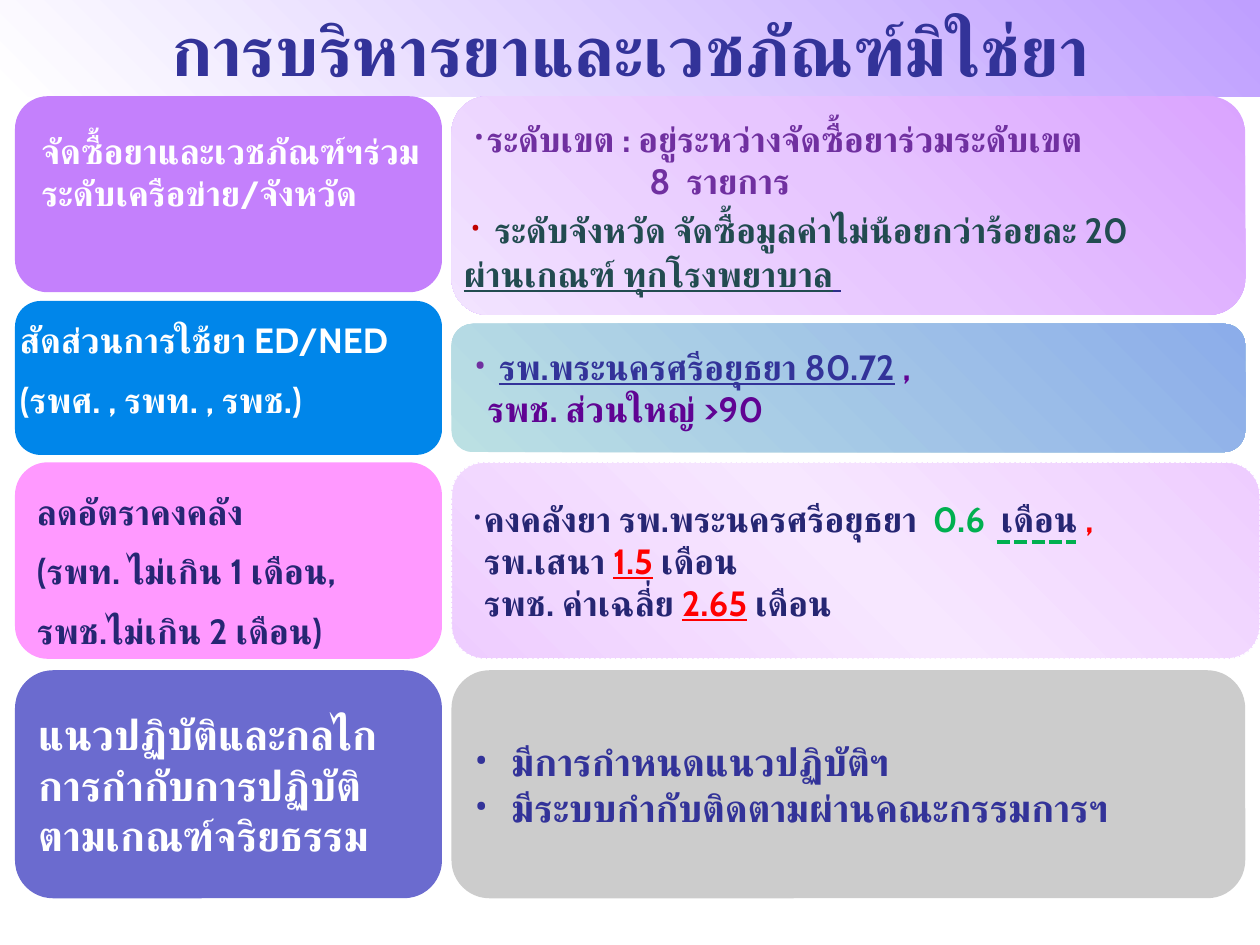
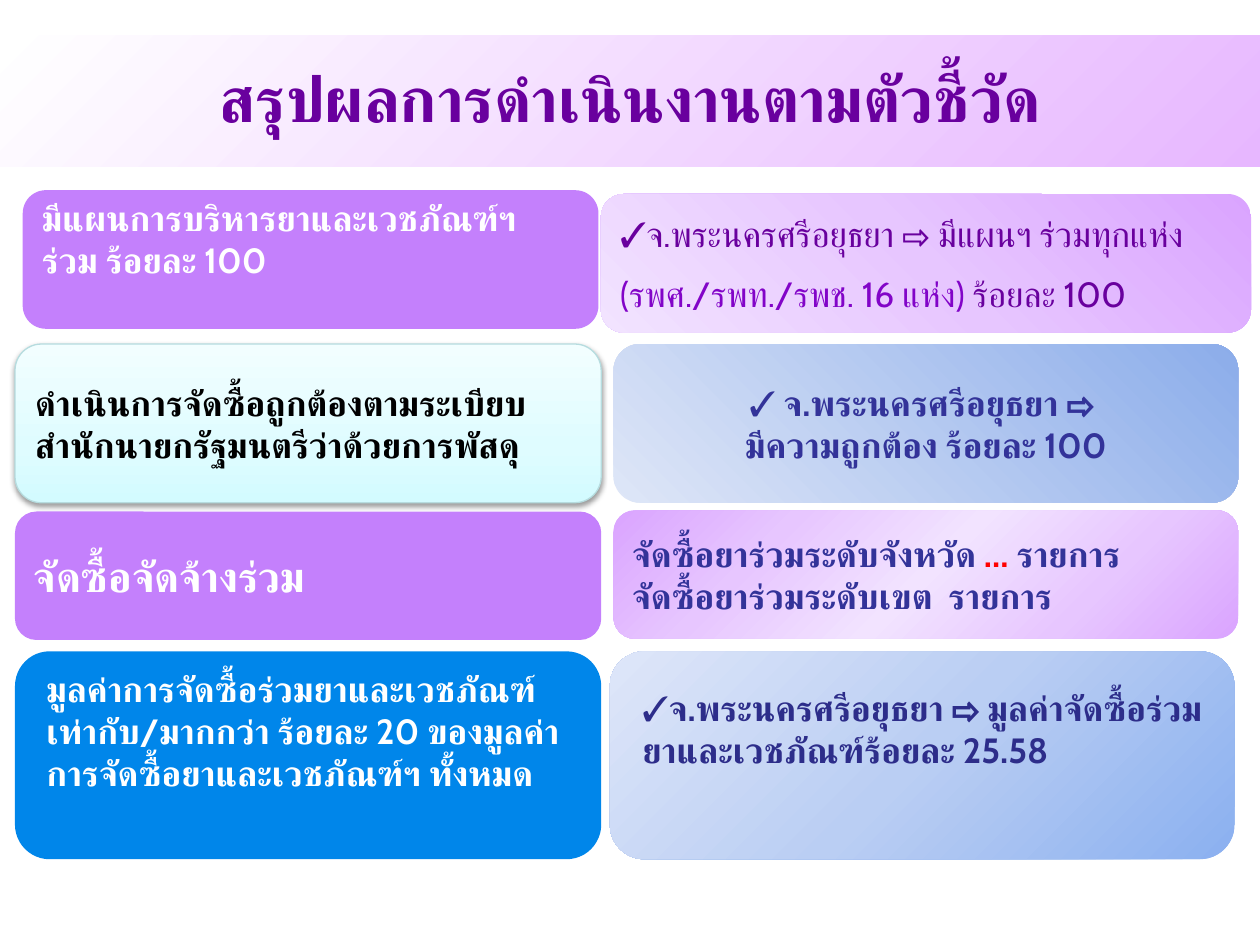
from dataclasses import dataclass
from typing import Optional

from lxml import etree
from pptx import Presentation
from pptx.dml.color import RGBColor
from pptx.enum.dml import MSO_LINE
from pptx.enum.shapes import MSO_CONNECTOR, MSO_SHAPE
from pptx.enum.text import MSO_ANCHOR, MSO_AUTO_SIZE, PP_ALIGN
from pptx.oxml.ns import qn
from pptx.util import Pt

ROUNDED = MSO_SHAPE.ROUNDED_RECTANGLE
STRAIGHT = MSO_CONNECTOR.STRAIGHT
DASHED = MSO_LINE.SQUARE_DOT
TOP, MIDDLE = MSO_ANCHOR.TOP, MSO_ANCHOR.MIDDLE
LEFT, CENTER = PP_ALIGN.LEFT, PP_ALIGN.CENTER
NO_AUTOFIT = MSO_AUTO_SIZE.NONE


@dataclass(frozen=True)
class Theme:
    font: str = "Cabin"
    bullet_font: str = "Roboto"
    body: int = 20
    medium: int = 22
    large: int = 24
    gap: int = 10
    white: str = "FFFFFF"
    black: str = "000000"
    indigo: str = "333399"
    navy: str = "262673"
    royal: str = "2D2D8A"
    plum: str = "69009E"
    violet: str = "7030A0"
    grape: str = "600393"
    orchid: str = "8204C8"
    forest: str = "224B50"
    green: str = "00B050"
    red: str = "FF0000"
    dark_red: str = "C00000"
    purple_fill: str = "C480FC"
    blue_fill: str = "0086EA"
    pink_fill: str = "FF99FF"
    slate_fill: str = "6B6BCF"
    grey_fill: str = "CCCCCC"
    aqua_edge: str = "B6DCDF"


T = Theme()


@dataclass(frozen=True)
class Gradient:
    angle: int
    stops: tuple


LILAC = Gradient(135, ((0, "DAA4FF"), (50, "E7C6FF"), (100, "F2E3FF")))
LILAC_GLOW = Gradient(45, ((0, "DAA4FF"), (25, "E7C6FF"), (50, "F2E3FF"),
                           (75, "E7C6FF"), (100, "DAA4FF")))
PALE_LILAC = Gradient(315, ((0, "EECDFF"), (50, "F7E7FF"), (100, "EECDFF")))
TEAL_BLUE = Gradient(315, ((0, "BBE0E3"), (100, "8CADEA")))
SKY = Gradient(315, ((0, "DEE6F7"), (100, "8CADEA")))
SKY_DOWN = Gradient(225, ((0, "8BB0F0"), (50, "BACEF3"), (100, "DEE6F9")))
AQUA = Gradient(270, ((0, "D3FBFF"), (35, "DFFCFF"), (100, "F2FEFF")))
MEDICINE_BAND = Gradient(315, ((0, "FFFFFF"), (100, "BF9FFF")))
SUMMARY_BAND = Gradient(45, ((0, "FFFFFF"), (100, "E7B7FF")))


@dataclass(frozen=True)
class Run:
    text: str
    color: Optional[str] = None
    underline: bool = False


@dataclass(frozen=True)
class Bullet:
    color: str
    percent: int = 100


@dataclass(frozen=True)
class Line:
    runs: tuple
    before: float = 0
    left: float = 0
    hang: float = 0
    bullet: Optional[Bullet] = None


def line(*runs, **layout):
    return Line(tuple(Run(r) if isinstance(r, str) else r for r in runs), **layout)


def points(box):
    return [Pt(length) for length in box]


def node(parent, tag, **attributes):
    return etree.SubElement(parent, qn(tag), {k: str(v) for k, v in attributes.items()})


def paint(shape, fill):
    if isinstance(fill, str):
        shape.fill.solid()
        shape.fill.fore_color.rgb = RGBColor.from_string(fill)
        return
    shape.fill.gradient()
    shape.fill.gradient_angle = (360 - fill.angle) % 360
    stops = shape.element.spPr.find(".//" + qn("a:gsLst"))
    for stop in list(stops):
        stops.remove(stop)
    for position, color in fill.stops:
        node(node(stops, "a:gs", pos=position * 1000), "a:srgbClr", val=color)


def add_bullet(paragraph, bullet):
    props = paragraph._p.get_or_add_pPr()
    node(node(props, "a:buClr"), "a:srgbClr", val=bullet.color)
    node(props, "a:buSzPct", val=bullet.percent * 1000)
    node(props, "a:buFont", typeface=T.bullet_font)
    node(props, "a:buChar", char="•")


def write(shape, lines, color, size=T.body, bold=True, align=LEFT, anchor=TOP,
          top=3.6, bottom=3.6):
    frame = shape.text_frame
    frame.word_wrap = True
    frame.auto_size = NO_AUTOFIT
    frame.vertical_anchor = anchor
    frame.margin_left = frame.margin_right = Pt(7.2)
    frame.margin_top, frame.margin_bottom = Pt(top), Pt(bottom)
    for index, item in enumerate(lines):
        paragraph = frame.add_paragraph() if index else frame.paragraphs[0]
        paragraph.alignment = align
        paragraph.space_before = Pt(item.before)
        props = paragraph._p.get_or_add_pPr()
        props.set("marL", str(Pt(item.left)))
        props.set("indent", str(-Pt(item.hang)))
        if item.bullet:
            add_bullet(paragraph, item.bullet)
        for piece in item.runs:
            run = paragraph.add_run()
            run.text = piece.text
            run.font.size = Pt(size)
            run.font.bold = bold
            run.font.underline = piece.underline
            run.font.color.rgb = RGBColor.from_string(piece.color or color)
            run.font.name = T.font
            node(run._r.get_or_add_rPr(), "a:cs", typeface=T.font)


def add_title(slide, text, box, fill, color, size, top):
    title = slide.shapes.title
    title.left, title.top, title.width, title.height = points(box)
    paint(title, fill)
    write(title, [line(text)], color, size, align=CENTER, top=top)


def add_panel(slide, box, fill, edge=None):
    panel = slide.shapes.add_shape(ROUNDED, *points(box))
    panel.shadow.inherit = False
    paint(panel, fill)
    if edge:
        panel.line.color.rgb = RGBColor.from_string(edge)
        panel.line.width = Pt(0.75)
    else:
        panel.line.fill.background()
    return panel


def add_text(slide, box, lines, color, **style):
    write(slide.shapes.add_textbox(*points(box)), lines, color, **style)


def add_soft_shadow(shape):
    effects = shape.element.spPr.find(qn("a:effectLst"))
    shadow = node(effects, "a:outerShdw", blurRad=Pt(3.1), dist=Pt(1.6),
                  dir=90 * 60000, rotWithShape=0)
    node(node(shadow, "a:srgbClr", val=T.black), "a:alpha", val=38000)


def add_dashed_underline(slide, start, end, y):
    rule = slide.shapes.add_connector(STRAIGHT, *points((start, y, end, y)))
    rule.line.color.rgb = RGBColor.from_string(T.green)
    rule.line.width = Pt(2.5)
    rule.line.dash_style = DASHED
    node(rule.element.spPr, "a:effectLst")


def build_medicine_slide(slide):
    topic_x, topic_w, result_x, result_w = 8.6, 244, 258, 453.6
    add_title(slide, "การบริหารยาและเวชภัณฑ์มิใช่ยา", (0, 0, 720, 55.4),
              MEDICINE_BAND, T.indigo, 40, 3.6)

    add_panel(slide, (topic_x, 55, topic_w, 112), T.purple_fill)
    add_text(slide, (16.6, 70.6, 236, 80),
             [line("จัดซื้อยาและเวชภัณฑ์ฯร่วมระดับเครือข่าย/จังหวัด")], T.white)
    add_panel(slide, (result_x, 55, result_w, 125), LILAC)
    add_text(slide, (result_x, 60.5, result_w, 143), [
        line("ระดับเขต : อยู่ระหว่างจัดซื้อยาร่วมระดับเขต",
             left=13, hang=7, bullet=Bullet(T.violet, 80)),
        line("8  รายการ", left=106),
        line(Run("ระดับจังหวัด จัดซื้อมูลค่าไม่น้อยกว่าร้อยละ 20", T.forest),
             before=4, left=17.5, hang=13.5, bullet=Bullet(T.dark_red, 80)),
        line(Run("ผ่านเกณฑ์ ทุกโรงพยาบาล", T.forest, True), Run(" ", T.royal, True),
             before=1),
    ], T.violet, top=6.6)

    add_panel(slide, (topic_x, 172, topic_w, 88), T.blue_fill)
    add_text(slide, (4.3, 178.6, 263.5, 67.7), [
        line("สัดส่วนการใช้ยา ED/NED"),
        line("(รพศ. , รพท. , รพช.)", before=T.gap)], T.white)
    add_panel(slide, (result_x, 185, result_w, 73.4), TEAL_BLUE)
    add_text(slide, (result_x, 190.8, 448, 60.5), [
        line(Run("รพ.พระนครศรีอยุธยา 80.72", T.indigo, True), " ", Run(",", T.grape),
             left=20, hang=14, bullet=Bullet(T.violet)),
        line("รพช. ส่วนใหญ่ >90", left=13.5)], T.grape, top=6.6)

    stock_topic = add_panel(slide, (topic_x, 264.2, topic_w, 112.3), T.pink_fill)
    write(stock_topic, [
        line("ลดอัตราคงคลัง"),
        line("(รพท. ไม่เกิน 1 เดือน,", before=T.gap),
        line("รพช.ไม่เกิน 2 เดือน)", before=T.gap)], T.navy, anchor=MIDDLE, top=15)
    stock_result = add_panel(slide, (result_x, 264.2, 462, 112.3), PALE_LILAC, T.white)
    stock_result.line.dash_style = DASHED
    write(stock_result, [
        line("คงคลังยา รพ.พระนครศรีอยุธยา  ", Run("0.6  ", T.green), "เดือน ",
             Run(",", T.red), left=6, hang=6, bullet=Bullet(T.navy, 70)),
        line("รพ.เสนา ", Run("1.5", T.red, True), " เดือน", left=6),
        line("รพช. ค่าเฉลี่ย ", Run("2.65", T.red, True), " เดือน", left=6),
    ], T.navy, anchor=MIDDLE)
    add_dashed_underline(slide, 569.5, 615, 309.6)

    ethics_topic = add_panel(slide, (topic_x, 383, topic_w, 130.3), T.slate_fill)
    write(ethics_topic, [line("แนวปฏิบัติและกลไก"), line("การกำกับการปฏิบัติ"),
                         line("ตามเกณฑ์จริยธรรม")], T.white, T.large, anchor=MIDDLE)
    ethics_result = add_panel(slide, (result_x, 383, result_w, 130.3), T.grey_fill)
    write(ethics_result, [
        line(text, left=21, hang=21, bullet=Bullet(T.indigo))
        for text in ("มีการกำหนดแนวปฏิบัติฯ", "มีระบบกำกับติดตามผ่านคณะกรรมการฯ")
    ], T.indigo, T.medium, anchor=MIDDLE)


def build_summary_slide(slide):
    topic_x, topic_w, result_x, result_w = 8.6, 335, 350.6, 357
    add_title(slide, "สรุปผลการดำเนินงานตามตัวชี้วัด", (0, 20.2, 720, 75),
              SUMMARY_BAND, T.plum, 36, 13.6)

    plan_topic = add_panel(slide, (13, 108.7, 329, 79.2), T.purple_fill)
    write(plan_topic, [line("มีแผนการบริหารยาและเวชภัณฑ์ฯ"), line("ร่วม ร้อยละ 100")],
          T.white, anchor=MIDDLE, bottom=27.6)
    plan_result = add_panel(slide, (343.4, 110.9, 371.5, 79.2), LILAC)
    write(plan_result, [
        line("✓จ.พระนครศรีอยุธยา ⇨ มีแผนฯ ร่วมทุกแห่ง"),
        line(Run("(รพศ./รพท./รพช. 16 แห่ง) ", T.orchid), "ร้อยละ 100", before=T.gap),
    ], T.plum, bold=False, anchor=MIDDLE)

    rules_topic = add_panel(slide, (topic_x, 196.6, topic_w, 90.7), AQUA, T.aqua_edge)
    add_soft_shadow(rules_topic)
    write(rules_topic, [line("ดำเนินการจัดซื้อถูกต้องตามระเบียบ"),
                        line("สำนักนายกรัฐมนตรีว่าด้วยการพัสดุ")], T.black, anchor=MIDDLE)
    rules_result = add_panel(slide, (result_x, 196.6, result_w, 90.7), SKY)
    write(rules_result, [line("✓ จ.พระนครศรีอยุธยา ⇨ "),
                         line("มีความถูกต้อง ร้อยละ 100")],
          T.indigo, align=CENTER, anchor=MIDDLE)

    joint_topic = add_panel(slide, (topic_x, 292.3, topic_w, 73.4), T.purple_fill)
    write(joint_topic, [line("จัดซื้อจัดจ้างร่วม")], T.white, T.large, anchor=MIDDLE)
    joint_result = add_panel(slide, (result_x, 291.6, result_w, 73.4), LILAC_GLOW)
    write(joint_result, [
        line("จัดซื้อยาร่วมระดับจังหวัด ", Run("… ", T.red), "รายการ"),
        line("จัดซื้อยาร่วมระดับเขต  รายการ")], T.indigo, anchor=MIDDLE)

    add_panel(slide, (topic_x, 372.2, topic_w, 118.8), T.blue_fill)
    add_text(slide, (19.4, 378, 317.5, 104.4), [
        line("มูลค่าการจัดซื้อร่วมยาและเวชภัณฑ์ เท่ากับ/มากกว่า ร้อยละ 20 "
             "ของมูลค่าการจัดซื้อยาและเวชภัณฑ์ฯ ทั้งหมด")], T.white)
    add_panel(slide, (348.5, 372.2, result_w, 118.8), SKY_DOWN)
    add_text(slide, (360, 388.8, 334.8, 80), [
        line("✓จ.พระนครศรีอยุธยา ⇨ มูลค่าจัดซื้อร่วมยาและเวชภัณฑ์ร้อยละ 25.58")],
        T.royal)


def main():
    deck = Presentation()
    deck.slide_width, deck.slide_height = Pt(720), Pt(540)
    title_only = deck.slide_layouts[5]
    for build in (build_medicine_slide, build_summary_slide):
        build(deck.slides.add_slide(title_only))
    deck.save("out.pptx")


if __name__ == "__main__":
    main()
